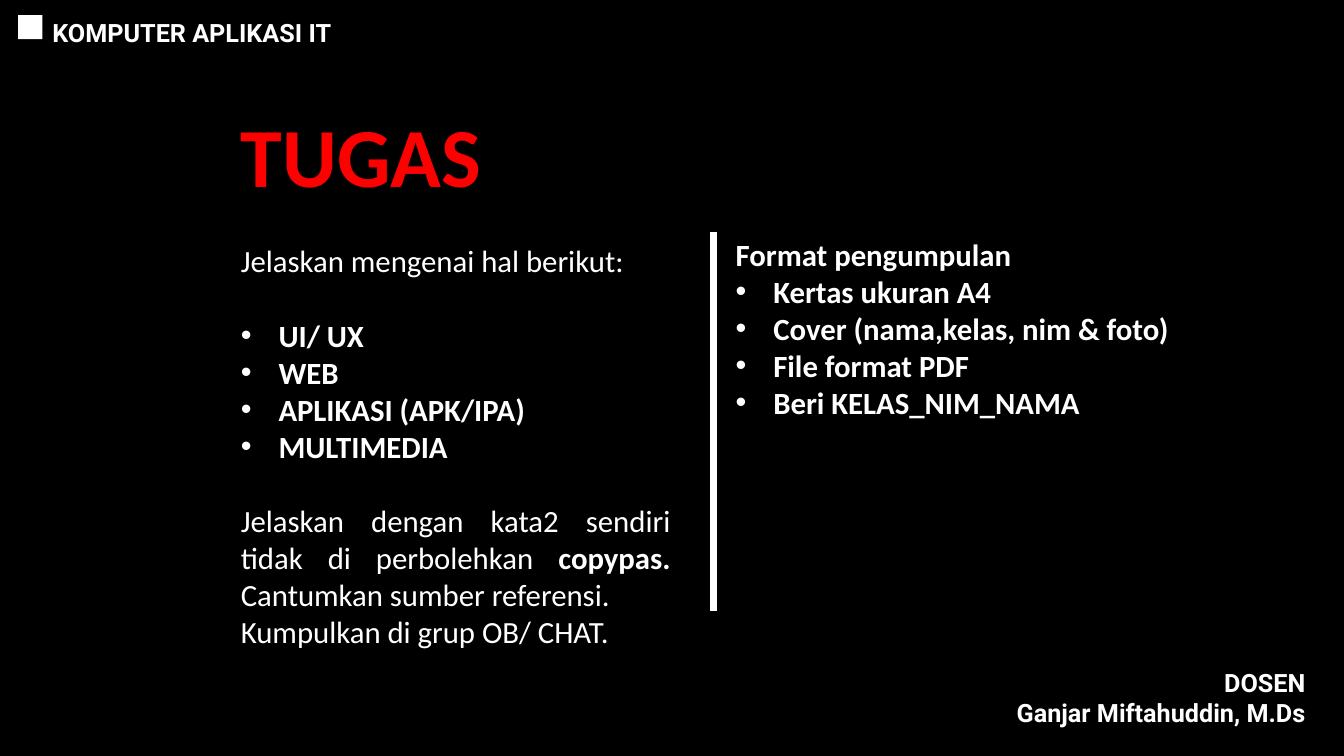
from lxml.etree import SubElement
from pptx import Presentation
from pptx.dml.color import RGBColor
from pptx.enum.shapes import MSO_SHAPE
from pptx.enum.text import PP_ALIGN
from pptx.oxml.ns import qn
from pptx.util import Cm, Pt

COLORS = {"black": "000000", "white": "FFFFFF", "red": "FF0000"}
WIDE, HIGH = 33.87, 19.05
INDENT = Cm(0.95)
GAP = 26.85

HEAD = ["KOMPUTER APLIKASI IT"]
TITLE = "TUGAS"
INTRO = "Jelaskan mengenai hal berikut:"
TOPICS = ["UI/ UX", "WEB", "APLIKASI (APK/IPA)", "MULTIMEDIA"]
RULES = [
    ("Jelaskan dengan kata2 sendiri tidak di perbolehkan ", False),
    ("copypas. ", True),
    ("Cantumkan sumber referensi.", False),
]
SUBMIT = "Kumpulkan di grup OB/ CHAT."
FORMAT = "Format pengumpulan"
NEEDS = [
    "Kertas ukuran A4",
    "Cover (nama,kelas, nim & foto)",
    "File format PDF",
    "Beri KELAS_NIM_NAMA",
]
SIGN = ["DOSEN", "Ganjar Miftahuddin, M.Ds"]


def block(slide, left, top, width, height, fill, edge=None):
    shape = slide.shapes.add_shape(
        MSO_SHAPE.RECTANGLE, Cm(left), Cm(top), Cm(width), Cm(height))
    shape.shadow.inherit = False
    shape.fill.solid()
    shape.fill.fore_color.rgb = RGBColor.from_string(COLORS[fill])
    if edge:
        shape.line.color.rgb = RGBColor.from_string(COLORS[edge])
        shape.line.width = Pt(2.25)
    else:
        shape.line.fill.background()


def frame(slide, left, top, width, height, wrap=True):
    text = slide.shapes.add_textbox(
        Cm(left), Cm(top), Cm(width), Cm(height)).text_frame
    text.word_wrap = wrap
    return text


def write(text, words, size=22, face="Calibri", color="white", bold=True,
          align=PP_ALIGN.JUSTIFY, gap=0, bullet=False):
    para = text.paragraphs[0]
    if para.runs:
        para = text.add_paragraph()
    para.alignment = align
    if gap:
        para.space_before = Pt(gap)
    if bullet:
        props = para._p.get_or_add_pPr()
        props.set("marL", str(INDENT))
        props.set("indent", str(-INDENT))
        SubElement(props, qn("a:buFont")).set("typeface", "Arial")
        SubElement(props, qn("a:buChar")).set("char", "•")
    para.font.size = Pt(size)
    para.font.name = face
    para.font.color.rgb = RGBColor.from_string(COLORS[color])
    if isinstance(words, str):
        para.font.bold = bold
        para.add_run().text = words
    else:
        for part, heavy in words:
            run = para.add_run()
            run.text = part
            run.font.bold = heavy


def label(text, lines, align):
    for line in lines:
        write(text, line, 18, "Roboto", align=align)


def main():
    """Build the assignment slide."""
    deck = Presentation()
    deck.slide_width, deck.slide_height = Cm(WIDE), Cm(HIGH)
    slide = deck.slides.add_slide(deck.slide_layouts[6])
    block(slide, 0, 0, WIDE, HIGH, "black")

    label(frame(slide, 24.64, 16.69, 8.51, 1.8, False), SIGN, PP_ALIGN.RIGHT)

    task = frame(slide, 5.82, 2.49, 11.33, 15.98)
    write(task, TITLE, 60, color="red", align=PP_ALIGN.LEFT)
    write(task, INTRO, bold=False, gap=GAP)
    for spot, topic in enumerate(TOPICS):
        write(task, topic, gap=0 if spot else GAP, bullet=True)
    write(task, RULES, gap=GAP)
    write(task, SUBMIT, bold=False)

    label(frame(slide, 1.07, 0.3, 7.98, 1.02, False), HEAD, PP_ALIGN.LEFT)
    block(slide, 0.46, 0.38, 0.61, 0.61, "white")

    form = frame(slide, 18.29, 5.82, 12.88, 6.83)
    write(form, FORMAT)
    for need in NEEDS:
        write(form, need, bullet=True)
    block(slide, 17.86, 5.82, 0.25, 9.63, "white", "black")

    deck.save("out.pptx")


if __name__ == "__main__":
    main()
